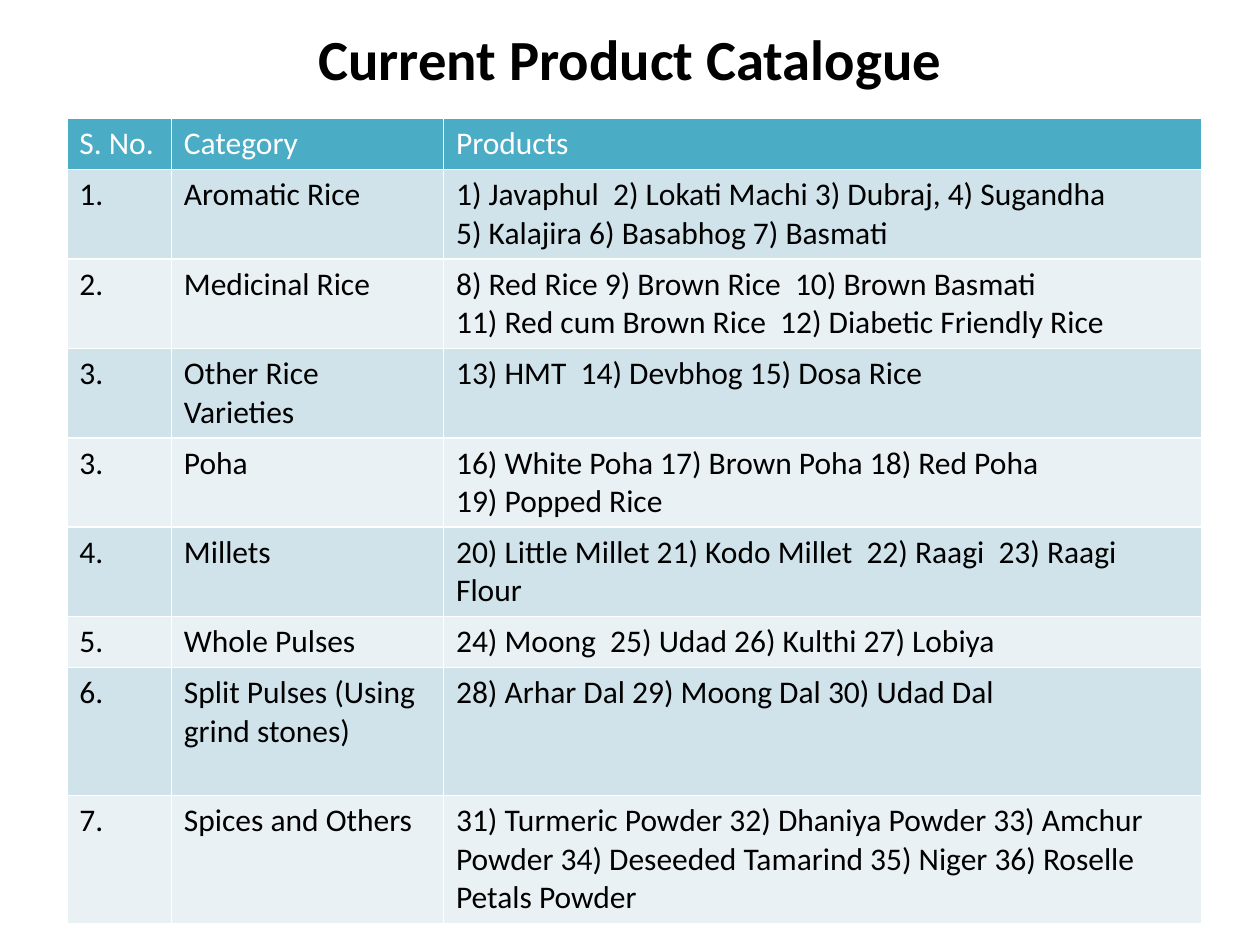
from pptx import Presentation
from pptx.dml.color import RGBColor
from pptx.enum.text import MSO_ANCHOR, PP_ALIGN
from pptx.util import Inches, Pt

MIDDLE = MSO_ANCHOR.MIDDLE
CENTER = PP_ALIGN.CENTER

FONT = "Calibri"
TITLE = "Current Product Catalogue"
HEAD = ("S. No.", "Category", "Products")
ITEMS = [
    ("1.", "Aromatic Rice",
     "1) Javaphul  2) Lokati Machi 3) Dubraj, 4) Sugandha\n"
     "5) Kalajira 6) Basabhog 7) Basmati"),
    ("2.", "Medicinal Rice",
     "8) Red Rice 9) Brown Rice  10) Brown Basmati\n"
     "11) Red cum Brown Rice  12) Diabetic Friendly Rice"),
    ("3.", "Other Rice Varieties", "13) HMT  14) Devbhog 15) Dosa Rice"),
    ("3.", "Poha",
     "16) White Poha 17) Brown Poha 18) Red Poha\n19) Popped Rice"),
    ("4.", "Millets",
     "20) Little Millet 21) Kodo Millet  22) Raagi  23) Raagi Flour"),
    ("5.", "Whole Pulses", "24) Moong  25) Udad 26) Kulthi 27) Lobiya"),
    ("6.", "Split Pulses (Using grind stones)",
     "28) Arhar Dal 29) Moong Dal 30) Udad Dal"),
    ("7.", "Spices and Others",
     "31) Turmeric Powder 32) Dhaniya Powder 33) Amchur Powder "
     "34) Deseeded Tamarind 35) Niger 36) Roselle Petals Powder"),
]
LINES = (1, 2, 2, 2, 2, 2, 1, 3, 3)
COLS = (0.83, 2.16, 6.02)
PAD, LINE = 0.1, 0.305
HEAD_FILL = "4BACC6"
BANDS = ("D0E3EA", "E9F1F5")


def color(code):
    return RGBColor.from_string(code)


def style(frame, size, ink, bold):
    for para in frame.paragraphs:
        font = para.font
        font.name, font.size, font.bold = FONT, Pt(size), bold
        font.color.rgb = color(ink)


def add_title(slide):
    box = slide.shapes.add_textbox(Inches(0.5), Inches(0.14), Inches(9), Inches(0.64))
    frame = box.text_frame
    frame.word_wrap = True
    frame.vertical_anchor = MIDDLE
    frame.text = TITLE
    frame.paragraphs[0].alignment = CENTER
    style(frame, 32.4, "000000", True)


def add_items(slide):
    rows = [HEAD] + ITEMS
    highs = [PAD + LINE * count for count in LINES]
    table = slide.shapes.add_table(
        len(rows), len(COLS), Inches(0.53), Inches(0.94),
        Inches(sum(COLS)), Inches(sum(highs))).table
    for col, width in zip(table.columns, COLS):
        col.width = Inches(width)
    for num, (row, high, texts) in enumerate(zip(table.rows, highs, rows)):
        row.height = Inches(high)
        fill = BANDS[(num - 1) % 2] if num else HEAD_FILL
        for cell, text in zip(row.cells, texts):
            cell.text = text
            cell.fill.solid()
            cell.fill.fore_color.rgb = color(fill)
            style(cell.text_frame, 18, "000000" if num else "FFFFFF", False)


def main():
    deck = Presentation()
    deck.slide_width, deck.slide_height = Inches(10), Inches(7.5)
    slide = deck.slides.add_slide(deck.slide_layouts[6])
    add_title(slide)
    add_items(slide)
    deck.save("out.pptx")


if __name__ == "__main__":
    main()
